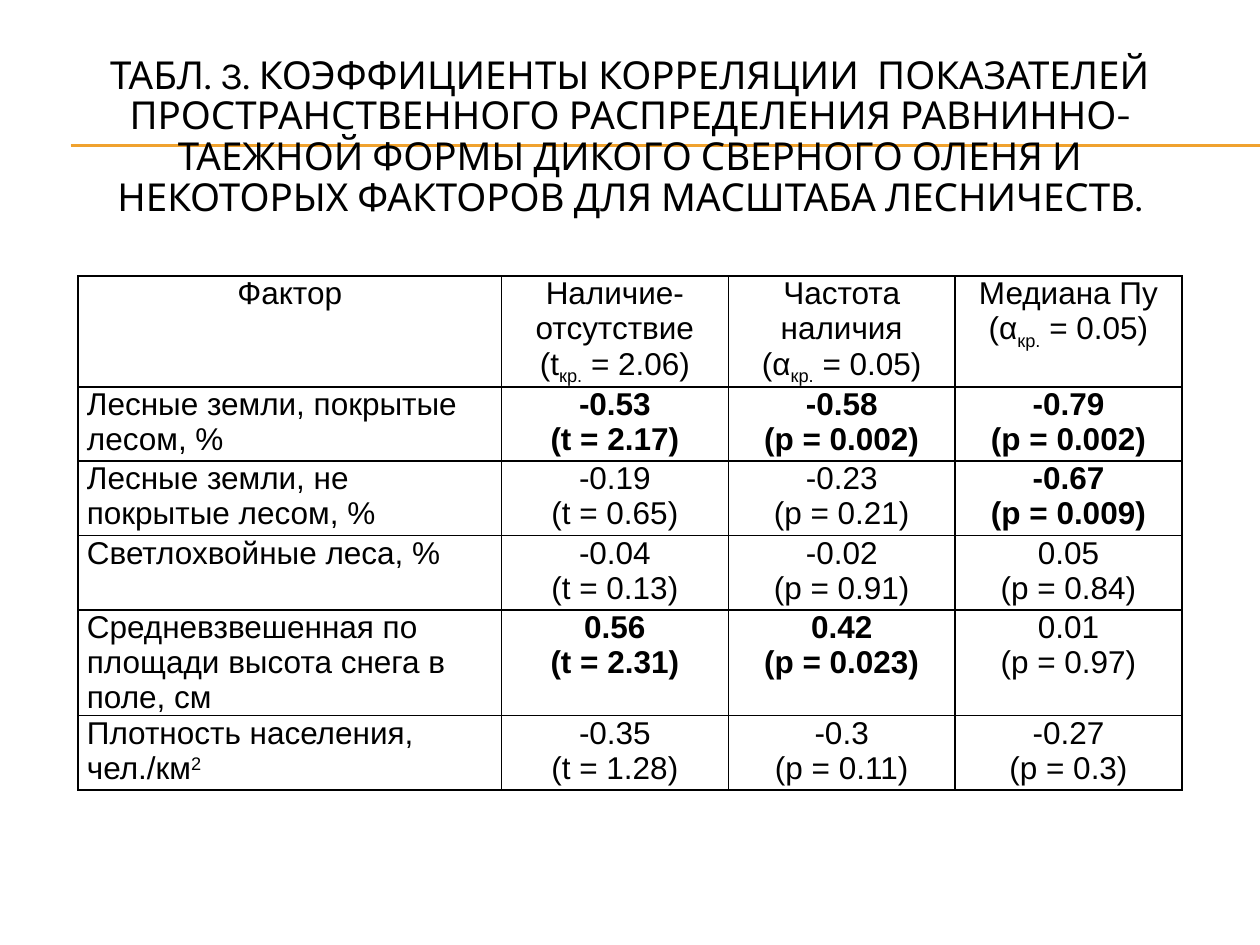
from dataclasses import dataclass

from lxml import etree
from pptx import Presentation
from pptx.dml.color import RGBColor
from pptx.enum.shapes import MSO_CONNECTOR
from pptx.enum.text import MSO_ANCHOR, PP_ALIGN
from pptx.oxml import parse_xml
from pptx.oxml.ns import nsdecls, qn
from pptx.util import Inches, Pt

LEFT, CENTER = PP_ALIGN.LEFT, PP_ALIGN.CENTER
TOP, MIDDLE = MSO_ANCHOR.TOP, MSO_ANCHOR.MIDDLE
STRAIGHT = MSO_CONNECTOR.STRAIGHT
SUB, SUPER = "-25000", "30000"
TITLE_ONLY = 5


@dataclass(frozen=True)
class Theme:
    ink: RGBColor = RGBColor(0, 0, 0)
    accent: RGBColor = RGBColor(0xF0, 0xA2, 0x2E)
    head: str = "Karla"
    body: str = "Arial"
    head_size: Pt = Pt(22)
    body_size: Pt = Pt(18)
    rule: Pt = Pt(0.75)
    border: Pt = Pt(1)


TITLE = (
    "ТАБЛ. 3. КОЭФФИЦИЕНТЫ КОРРЕЛЯЦИИ  ПОКАЗАТЕЛЕЙ ПРОСТРАНСТВЕННОГО "
    "РАСПРЕДЕЛЕНИЯ РАВНИННО-ТАЕЖНОЙ ФОРМЫ ДИКОГО СВЕРНОГО ОЛЕНЯ "
    "И НЕКОТОРЫХ ФАКТОРОВ ДЛЯ МАСШТАБА ЛЕСНИЧЕСТВ."
)


def limit(sign, value):
    """Give the runs of a critical value: sign, subscript, number."""
    return [(f"({sign}", None), ("кр.", SUB), (f" = {value})", None)]


HEADS = [
    ["Фактор"],
    ["Наличие-отсутствие", limit("t", "2.06")],
    ["Частота наличия", limit("α", "0.05")],
    ["Медиана Пу", limit("α", "0.05")],
]
# Factor, then (coefficient, test value, significant) for each column
ROWS = [
    ("Лесные земли, покрытые лесом, %",
     ("-0.53", "2.17", True), ("-0.58", "0.002", True), ("-0.79", "0.002", True)),
    ("Лесные земли, не покрытые лесом, %",
     ("-0.19", "0.65", False), ("-0.23", "0.21", False), ("-0.67", "0.009", True)),
    ("Светлохвойные леса, %",
     ("-0.04", "0.13", False), ("-0.02", "0.91", False), ("0.05", "0.84", False)),
    ("Средневзвешенная по площади высота снега в поле, см",
     ("0.56", "2.31", True), ("0.42", "0.023", True), ("0.01", "0.97", False)),
    ([("Плотность населения, чел./км", None), ("2", SUPER)],
     ("-0.35", "1.28", False), ("-0.3", "0.11", False), ("-0.27", "0.3", False)),
]
TESTS = "tpp"
WIDTHS = [3.36, 1.8, 1.8, 1.8]


class Deck:
    """Hold the theme and the current slide, and draw on it."""

    def __init__(self, theme):
        self.theme = theme
        self.show = Presentation()
        self.show.slide_width, self.show.slide_height = Inches(10), Inches(7.5)
        self.slide = self.show.slides.add_slide(self.show.slide_layouts[TITLE_ONLY])

    def font(self, para, name, size, bold=False):
        font = para.font
        font.name, font.size, font.bold = name, size, bold
        font.color.rgb = self.theme.ink

    def title(self, text, x, y, w, h):
        box = self.slide.shapes.title
        box.left, box.top, box.width, box.height = map(Inches, (x, y, w, h))
        frame = box.text_frame
        frame.text = text
        frame.word_wrap, frame.vertical_anchor = True, MIDDLE
        para = frame.paragraphs[0]
        para.alignment, para.line_spacing = CENTER, 0.88
        self.font(para, self.theme.head, self.theme.head_size)

    def rule(self, x, y, end):
        """Draw a level line behind everything else."""
        line = self.slide.shapes.add_connector(
            STRAIGHT, Inches(x), Inches(y), Inches(end), Inches(y))
        line.line.color.rgb = self.theme.accent
        line.line.width = self.theme.rule
        node = line._element
        etree.SubElement(node.spPr, qn("a:effectLst"))
        self.slide.shapes._spTree.insert(2, node)

    def table(self, rows, cols, x, y, widths, height):
        frame = self.slide.shapes.add_table(
            rows, cols, Inches(x), Inches(y), Inches(sum(widths)), Inches(rows * height))
        grid = frame.table
        grid.first_row = grid.horz_banding = False
        for col, width in zip(grid.columns, widths):
            col.width = Inches(width)
        for row in grid.rows:
            row.height = Inches(height)
        return grid

    def cell(self, cell, lines, align=CENTER, bold=False):
        """Fill a cell; a line is plain text or a list of (text, baseline)."""
        cell.margin_left = cell.margin_right = Inches(0.07)
        cell.margin_top = cell.margin_bottom = 0
        cell.vertical_anchor = TOP
        cell.fill.background()
        self.frame(cell)
        for i, line in enumerate(lines):
            text = cell.text_frame
            para = text.add_paragraph() if i else text.paragraphs[0]
            para.alignment = align
            self.font(para, self.theme.body, self.theme.body_size, bold)
            for words, base in [(line, None)] if isinstance(line, str) else line:
                run = para.add_run()
                run.text = words
                if base:
                    run.font._element.set("baseline", base)

    def frame(self, cell):
        """Put a border on all four sides of a cell."""
        props = cell._tc.get_or_add_tcPr()
        for i, side in enumerate("LRTB"):
            props.insert(i, parse_xml(
                f'<a:ln{side} {nsdecls("a")} w="{self.theme.border}"><a:solidFill>'
                f'<a:srgbClr val="{self.theme.ink}"/></a:solidFill></a:ln{side}>'))


def main():
    deck = Deck(Theme())
    for y in (1.16, 1.15):
        deck.rule(0.56, y, 10)
    deck.title(TITLE, 0.5, 0.31, 9, 1.57)

    grid = deck.table(len(ROWS) + 1, len(HEADS), 0.62, 2.19, WIDTHS, 0.59)
    for c, lines in enumerate(HEADS):
        deck.cell(grid.cell(0, c), lines)
    for r, (factor, *values) in enumerate(ROWS, 1):
        deck.cell(grid.cell(r, 0), [factor], LEFT)
        for c, (test, (coef, value, bold)) in enumerate(zip(TESTS, values), 1):
            deck.cell(grid.cell(r, c), [coef, f"({test} = {value})"], bold=bold)
    deck.show.save("out.pptx")


if __name__ == "__main__":
    main()
